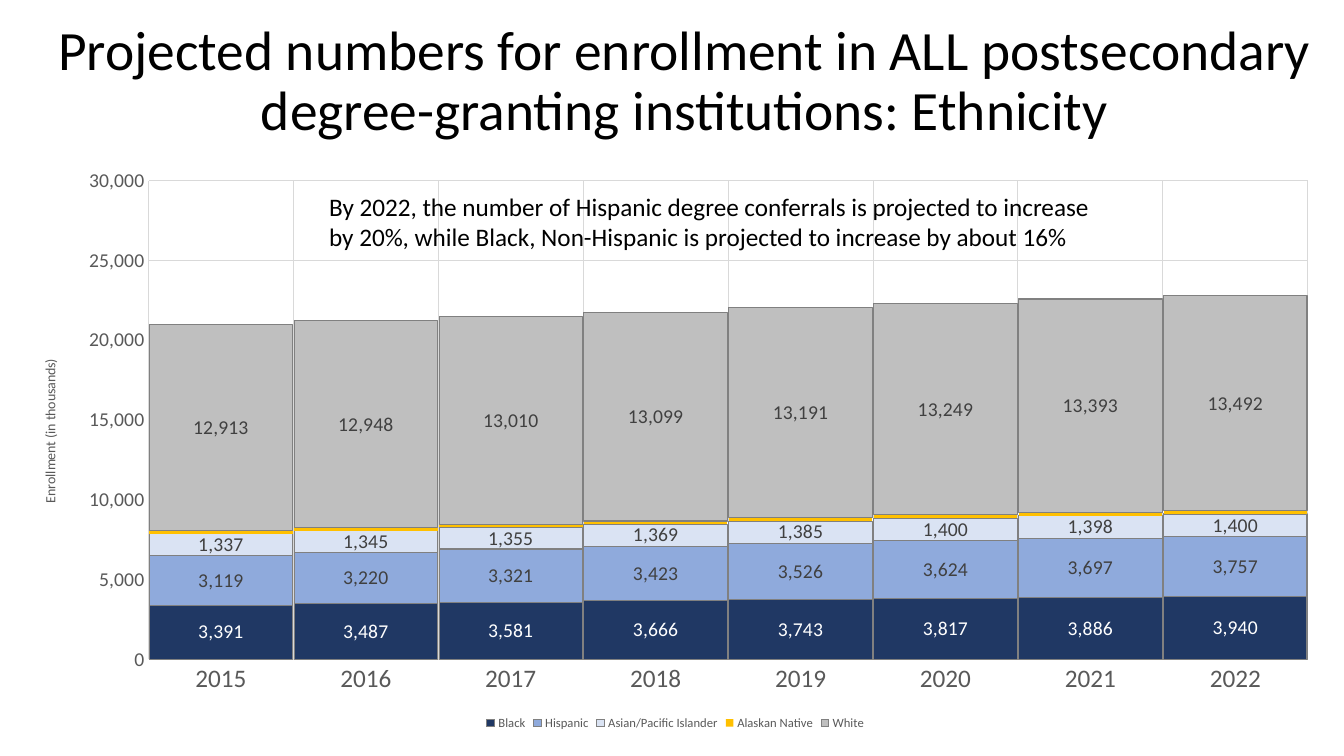
from lxml.etree import SubElement
from pptx import Presentation
from pptx.chart.data import CategoryChartData
from pptx.dml.color import RGBColor
from pptx.enum.chart import (XL_CHART_TYPE, XL_LABEL_POSITION,
                             XL_LEGEND_POSITION, XL_TICK_MARK)
from pptx.enum.text import MSO_ANCHOR, PP_ALIGN
from pptx.oxml import parse_xml
from pptx.oxml.ns import nsdecls, qn
from pptx.util import Pt

FONT = "Calibri"
BLACK = RGBColor(0x00, 0x00, 0x00)
WHITE = RGBColor(0xFF, 0xFF, 0xFF)
DARK_GREY = RGBColor(0x40, 0x40, 0x40)
AXIS_GREY = RGBColor(0x59, 0x59, 0x59)
OUTLINE_GREY = RGBColor(0x80, 0x80, 0x80)
GRID_GREY = RGBColor(0xD9, 0xD9, 0xD9)
NAVY = RGBColor(0x20, 0x38, 0x64)
BLUE = RGBColor(0x8F, 0xAA, 0xDC)
PALE_BLUE = RGBColor(0xDA, 0xE3, 0xF3)
GOLD = RGBColor(0xFF, 0xC0, 0x00)
SILVER = RGBColor(0xBF, 0xBF, 0xBF)

TITLE = ("Projected numbers for enrollment in ALL postsecondary "
         "degree-granting institutions: Ethnicity")
NOTE = ("By 2022, the number of Hispanic degree conferrals is projected to increase "
        "by 20%, while Black, Non-Hispanic is projected to increase by about 16%")
YEARS = [str(year) for year in range(2015, 2023)]
GROUPS = [
    ("Black", NAVY, WHITE, [3391, 3487, 3581, 3666, 3743, 3817, 3886, 3940]),
    ("Hispanic", BLUE, DARK_GREY, [3119, 3220, 3321, 3423, 3526, 3624, 3697, 3757]),
    ("Asian/Pacific Islander", PALE_BLUE, DARK_GREY,
     [1337, 1345, 1355, 1369, 1385, 1400, 1398, 1400]),
    ("Alaskan Native", GOLD, None, [200] * len(YEARS)),
    ("White", SILVER, DARK_GREY,
     [12913, 12948, 13010, 13099, 13191, 13249, 13393, 13492]),
]
PLOT_AREA = {"x": 0.1, "y": 0.04, "w": 0.88, "h": 0.83}


def set_font(font, size, color):
    font.name = FONT
    font.size = Pt(size)
    font.bold = False
    font.color.rgb = color


def set_line(line, color):
    line.color.rgb = color
    line.width = Pt(0.75)


def add_run(p, text, size, color):
    r = p.add_run()
    r.text = text
    set_font(r.font, size, color)


def add_title(s):
    sp = s.shapes.title
    sp.left, sp.top, sp.width, sp.height = Pt(25), Pt(6.5), Pt(928), Pt(104.5)
    tf = sp.text_frame
    tf.word_wrap = True
    tf.vertical_anchor = MSO_ANCHOR.MIDDLE
    p = tf.paragraphs[0]
    p.alignment = PP_ALIGN.CENTER
    p.line_spacing = 0.9
    add_run(p, TITLE, 39.6, BLACK)


def add_note(s):
    sp = s.shapes.add_textbox(Pt(228), Pt(133), Pt(559.5), Pt(51))
    tf = sp.text_frame
    tf.word_wrap = True
    add_run(tf.paragraphs[0], NOTE, 18, BLACK)


def format_axis(axis, size):
    axis.major_tick_mark = axis.minor_tick_mark = XL_TICK_MARK.NONE
    axis.has_major_gridlines = True
    set_line(axis.major_gridlines.format.line, GRID_GREY)
    set_font(axis.tick_labels.font, size, AXIS_GREY)


def format_series(series, color, label_color):
    series.format.fill.solid()
    series.format.fill.fore_color.rgb = color
    if label_color is None:
        series.format.line.fill.background()
        return
    set_line(series.format.line, OUTLINE_GREY)
    labels = series.data_labels
    labels.show_value = True
    labels.position = XL_LABEL_POSITION.CENTER
    labels.number_format = "#,##0"
    labels.number_format_is_linked = False
    set_font(labels.font, 14, label_color)


def place_plot(chart):
    plot_area = chart.plots[0]._element.getparent()
    for old in plot_area.findall(qn("c:layout")):
        plot_area.remove(old)
    layout = parse_xml(f"<c:layout {nsdecls('c')}/>")
    manual = SubElement(layout, qn("c:manualLayout"))
    settings = {"layoutTarget": "inner", "xMode": "edge", "yMode": "edge", **PLOT_AREA}
    for tag, value in settings.items():
        SubElement(manual, qn(f"c:{tag}")).set("val", str(value))
    plot_area.insert(0, layout)


def add_enrollment_chart(s):
    data = CategoryChartData(number_format="#,##0")
    data.categories = YEARS
    for name, _, _, values in GROUPS:
        data.add_series(name, values)
    chart = s.shapes.add_chart(XL_CHART_TYPE.COLUMN_STACKED, Pt(12), Pt(112.5),
                               Pt(941), Pt(412), data).chart
    set_font(chart.font, 10, BLACK)
    chart.has_title = False
    chart.has_legend = True
    chart.legend.position = XL_LEGEND_POSITION.BOTTOM
    chart.legend.include_in_layout = False
    set_font(chart.legend.font, 9, AXIS_GREY)

    plot = chart.plots[0]
    plot.gap_width = 1
    plot.overlap = 100
    plot.vary_by_categories = False
    for series, (_, color, label_color, _) in zip(plot.series, GROUPS):
        format_series(series, color, label_color)

    format_axis(chart.category_axis, 18)
    set_line(chart.category_axis.format.line, GRID_GREY)
    axis = chart.value_axis
    format_axis(axis, 14)
    axis.format.line.fill.background()
    axis.minimum_scale, axis.maximum_scale, axis.major_unit = 0, 30000, 5000
    axis.tick_labels.number_format = "#,##0"
    axis.tick_labels.number_format_is_linked = False
    add_run(axis.axis_title.text_frame.paragraphs[0],
            "Enrollment (in thousands)", 10, AXIS_GREY)
    place_plot(chart)


def main():
    prs = Presentation()
    prs.slide_width, prs.slide_height = Pt(960), Pt(540)
    s = prs.slides.add_slide(prs.slide_layouts[5])
    add_title(s)
    add_enrollment_chart(s)
    add_note(s)
    prs.save("out.pptx")


if __name__ == "__main__":
    main()
